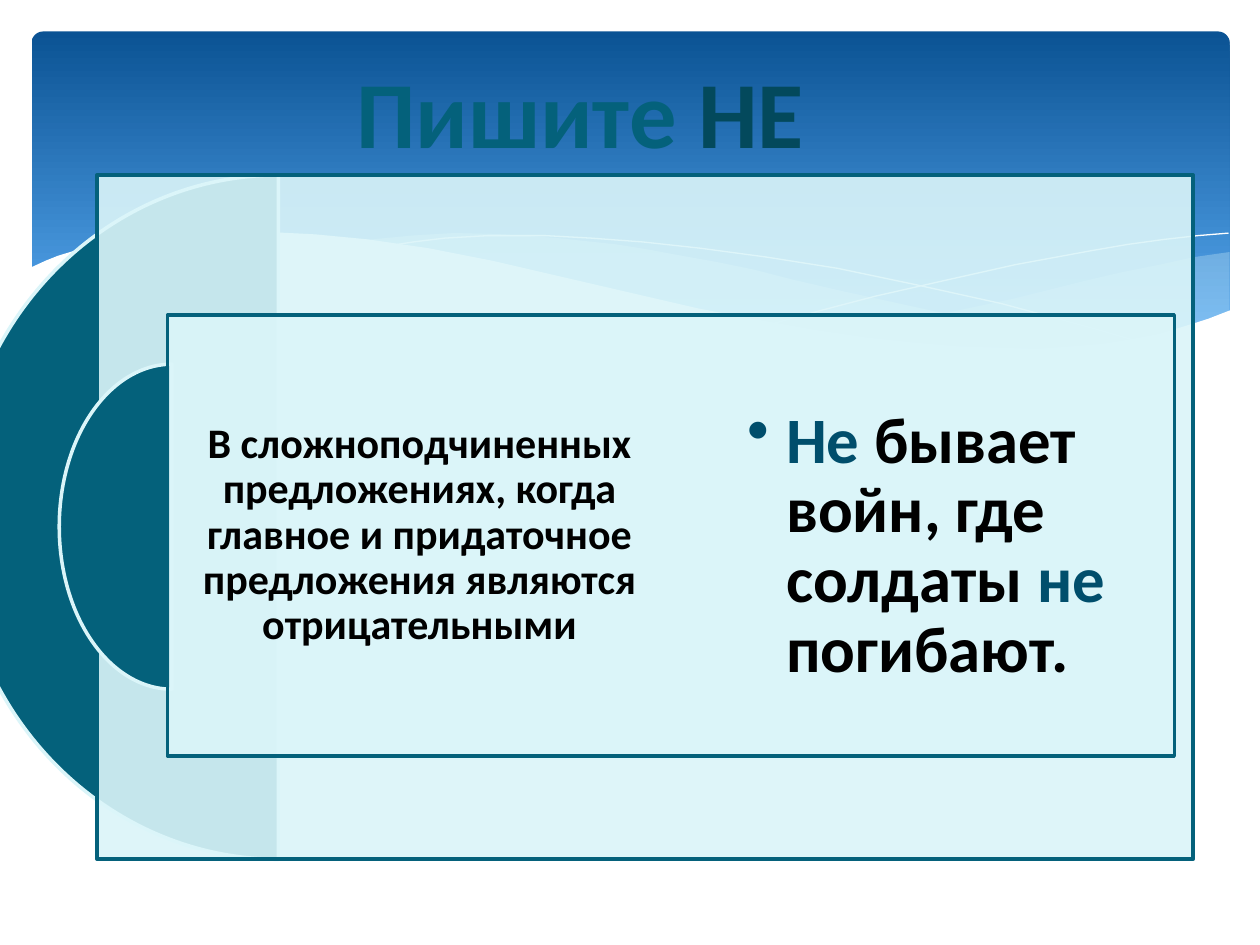
"""Build a slide on writing НЕ in complex sentences, with a wave banner."""
from lxml import etree
from pptx import Presentation
from pptx.dml.color import RGBColor
from pptx.enum.shapes import MSO_SHAPE as SHAPE
from pptx.enum.text import MSO_ANCHOR as ANCHOR, PP_ALIGN as ALIGN
from pptx.oxml.ns import qn
from pptx.util import Inches, Pt

THEME = {
    "font": "Calibri", "title": 54, "example": 37, "rule": 24, "line": 2,
    "teal": "04617B", "deep": "03495C", "accent": "004E6C", "pale": "DBF5F9",
    "sky_top": "0B5394", "sky_low": "59AAF2", "white": "FFFFFF", "black": "000000",
}


def rgb(name):
    return RGBColor.from_string(THEME[name])


def paint(sp, fill=None, alpha=None, line=None, width=0):
    sp.shadow.inherit = False
    if fill:
        sp.fill.solid()
        sp.fill.fore_color.rgb = rgb(fill)
    else:
        sp.fill.background()
    if alpha:
        color = sp._element.spPr.find(qn("a:solidFill"))[0]
        etree.SubElement(color, qn("a:alpha")).set("val", str(alpha * 1000))
    if line:
        sp.line.color.rgb = rgb(line)
        sp.line.width = Pt(width)
    else:
        sp.line.fill.background()


prs = Presentation()
prs.slide_width, prs.slide_height = Inches(10), Inches(7.5)
s = prs.slides.add_slide(prs.slide_layouts[6])

banner = s.shapes.add_shape(SHAPE.ROUNDED_RECTANGLE, Inches(0.25), Inches(0.25), Inches(9.51), Inches(2.7))
banner.adjustments[0] = 0.034
paint(banner)
banner.fill.gradient()
banner.fill.gradient_angle = 270
for stop, (position, name) in zip(banner.fill.gradient_stops, [(0, "sky_top"), (0.9, "sky_low")]):
    stop.position = position
    stop.color.rgb = rgb(name)

waves = [
    ([(9.76, 2), (9.48, 2.04), (9.21, 2.1), (8.91, 2.16), (8.61, 2.23), (8.05, 2.37), (7.53, 2.48),
      (7.06, 2.57), (6.61, 2.65), (6.91, 2.69), (7.19, 2.72), (7.45, 2.75), (7.69, 2.77), (8.03, 2.78),
      (8.35, 2.77), (8.63, 2.75), (8.89, 2.72), (9.13, 2.67), (9.35, 2.62), (9.63, 2.52), (9.76, 2.47)],
     {"fill": "pale", "alpha": 29}),
    ([(8.93, 2.73), (8.66, 2.69), (8.07, 2.6), (7.41, 2.47), (6.68, 2.31), (6.29, 2.22), (5.98, 2.14),
      (5.69, 2.08), (5.41, 2.03), (5.14, 1.98), (4.89, 1.94), (4.42, 1.89), (3.99, 1.86), (3.61, 1.85),
      (3.28, 1.87), (2.86, 1.91), (3.23, 1.96), (3.62, 2.03), (4.04, 2.11), (4.49, 2.22), (4.91, 2.32),
      (5.3, 2.4), (5.84, 2.52), (6.18, 2.58), (6.5, 2.64), (6.8, 2.68), (7.09, 2.72), (7.36, 2.75),
      (7.61, 2.77), (7.96, 2.78), (8.28, 2.78), (8.57, 2.77)],
     {"fill": "pale", "alpha": 40}),
    ([(3.09, 1.95), (3.28, 1.92), (3.53, 1.89), (3.87, 1.87), (4.33, 1.87), (4.69, 1.89), (5.1, 1.92),
      (5.56, 1.97), (6.08, 2.04), (6.65, 2.13), (7.27, 2.26), (7.95, 2.41), (8.69, 2.61), (9.07, 2.72)],
     {"line": "white"}),
    ([(6.13, 2.57), (6.53, 2.46), (6.95, 2.35), (7.48, 2.23), (8.06, 2.1), (8.66, 1.99), (8.95, 1.94),
      (9.24, 1.9), (9.51, 1.87), (9.75, 1.85)],
     {"line": "white"}),
    ([(9.77, 2.46), (9.59, 2.53), (9.4, 2.59), (9.2, 2.65), (8.99, 2.69), (8.75, 2.73), (8.5, 2.75),
      (8.23, 2.77), (7.93, 2.76), (7.61, 2.75), (7.26, 2.72), (6.88, 2.68), (6.48, 2.62), (6.03, 2.54),
      (5.55, 2.45), (5.03, 2.33), (4.47, 2.2), (3.91, 2.07), (3.4, 1.97), (2.92, 1.9), (2.5, 1.86),
      (2.11, 1.84), (1.77, 1.84), (1.46, 1.85), (1.19, 1.87), (0.95, 1.91), (0.76, 1.95), (0.59, 1.99),
      (0.46, 2.03), (0.36, 2.07), (0.23, 2.13), (0.23, 3.29), (9.77, 3.29)],
     {"fill": "white"}),
]
for points, style in waves:
    start, *rest = [(Inches(x), Inches(y)) for x, y in points]
    builder = s.shapes.build_freeform(*start)
    builder.add_line_segments(rest, close="fill" in style)
    paint(builder.convert_to_shape(), **style)

half_disc = {"fill": "teal", "line": "pale", "width": THEME["line"]}
panel = {"fill": "pale", "alpha": 90, "line": "teal", "width": THEME["line"]}
for kind, box, style in [
    (SHAPE.PIE, (-0.35, 1.39, 5.12, 5.43), half_disc),
    (SHAPE.RECTANGLE, (0.77, 1.39, 8.7, 5.43), panel),
    (SHAPE.PIE, (0.47, 2.89, 1.79, 2.58), half_disc),
    (SHAPE.RECTANGLE, (1.33, 2.5, 7.99, 3.5), panel),
]:
    sp = s.shapes.add_shape(kind, *map(Inches, box))
    if kind == SHAPE.PIE:
        sp.adjustments[0], sp.adjustments[1] = 54, 162
    paint(sp, **style)

texts = [
    ((1.33, 2.5, 4, 3.5), 0.1, "rule", {"alignment": ALIGN.CENTER, "line_spacing": 0.9},
     [("В сложноподчиненных предложениях, когда главное и придаточное предложения являются отрицательными",
       "black")]),
    ((5.78, 3.05, 3.17, 2.58), 0.15, "example", {"alignment": ALIGN.LEFT, "line_spacing": 0.9},
     [("Не", "accent"), (" бывает войн, где солдаты ", "black"), ("не", "accent"), (" погибают.", "black")]),
    ((2.32, 0.37, 4.57, 1.02), 0.1, "title", {"alignment": ALIGN.CENTER},
     [("Пишите ", "teal"), ("НЕ", "deep")]),
]
for box, inset, size, layout, runs in texts:
    tf = s.shapes.add_textbox(*map(Inches, box)).text_frame
    frame = {"word_wrap": True, "vertical_anchor": ANCHOR.MIDDLE}
    frame |= {f"margin_{side}": Inches(inset) for side in ("left", "top", "right", "bottom")}
    for name, value in frame.items():
        setattr(tf, name, value)
    p = tf.paragraphs[0]
    for name, value in layout.items():
        setattr(p, name, value)
    if size == "example":
        pPr = p._p.get_or_add_pPr()
        pPr.set("marL", str(Inches(0.31)))
        pPr.set("indent", str(Inches(-0.31)))
        etree.SubElement(pPr, qn("a:buChar")).set("char", "•")
    for text, color in runs:
        r = p.add_run()
        r.text = text
        for name, value in {"name": THEME["font"], "size": Pt(THEME[size]), "bold": True}.items():
            setattr(r.font, name, value)
        r.font.color.rgb = rgb(color)

prs.save("out.pptx")
